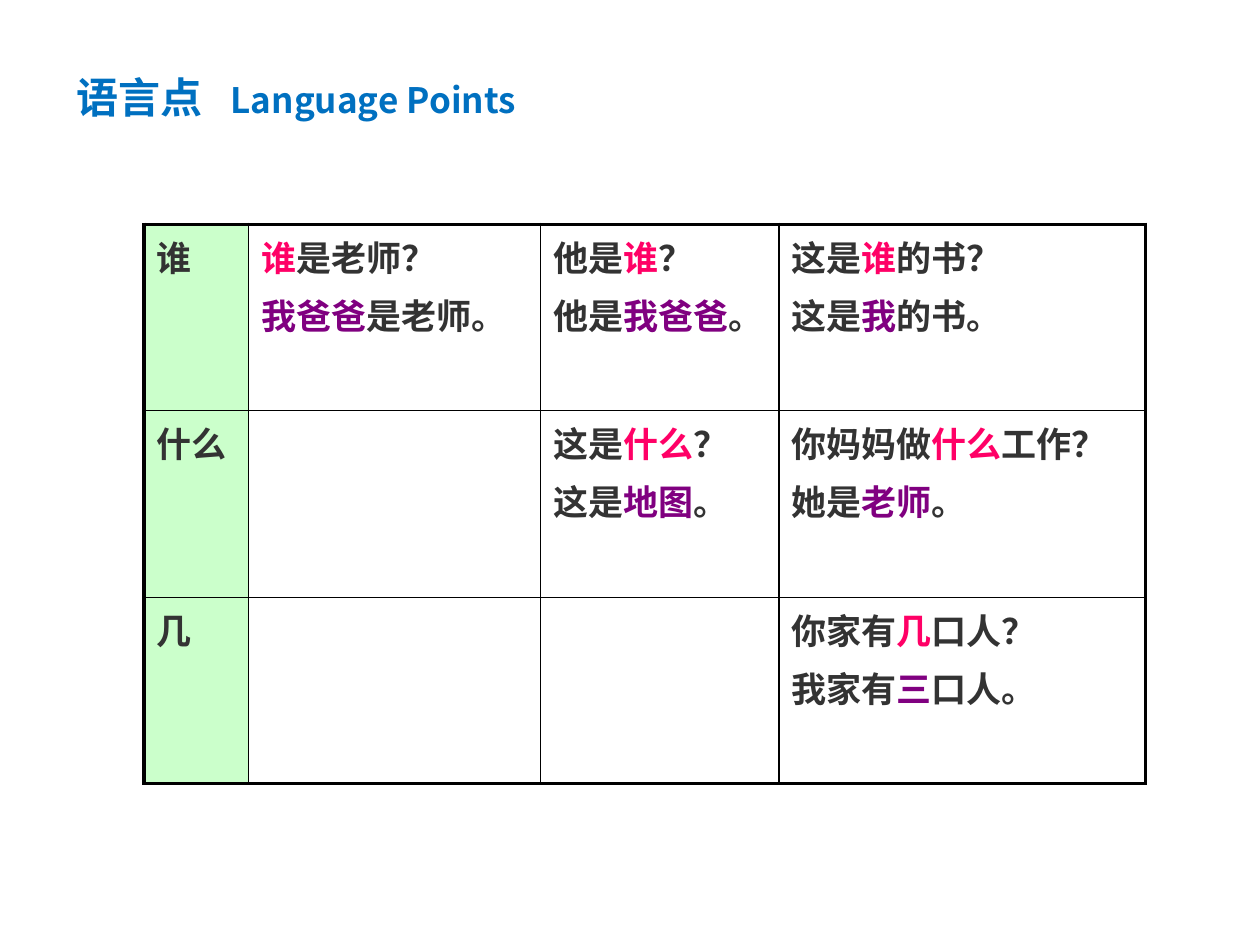
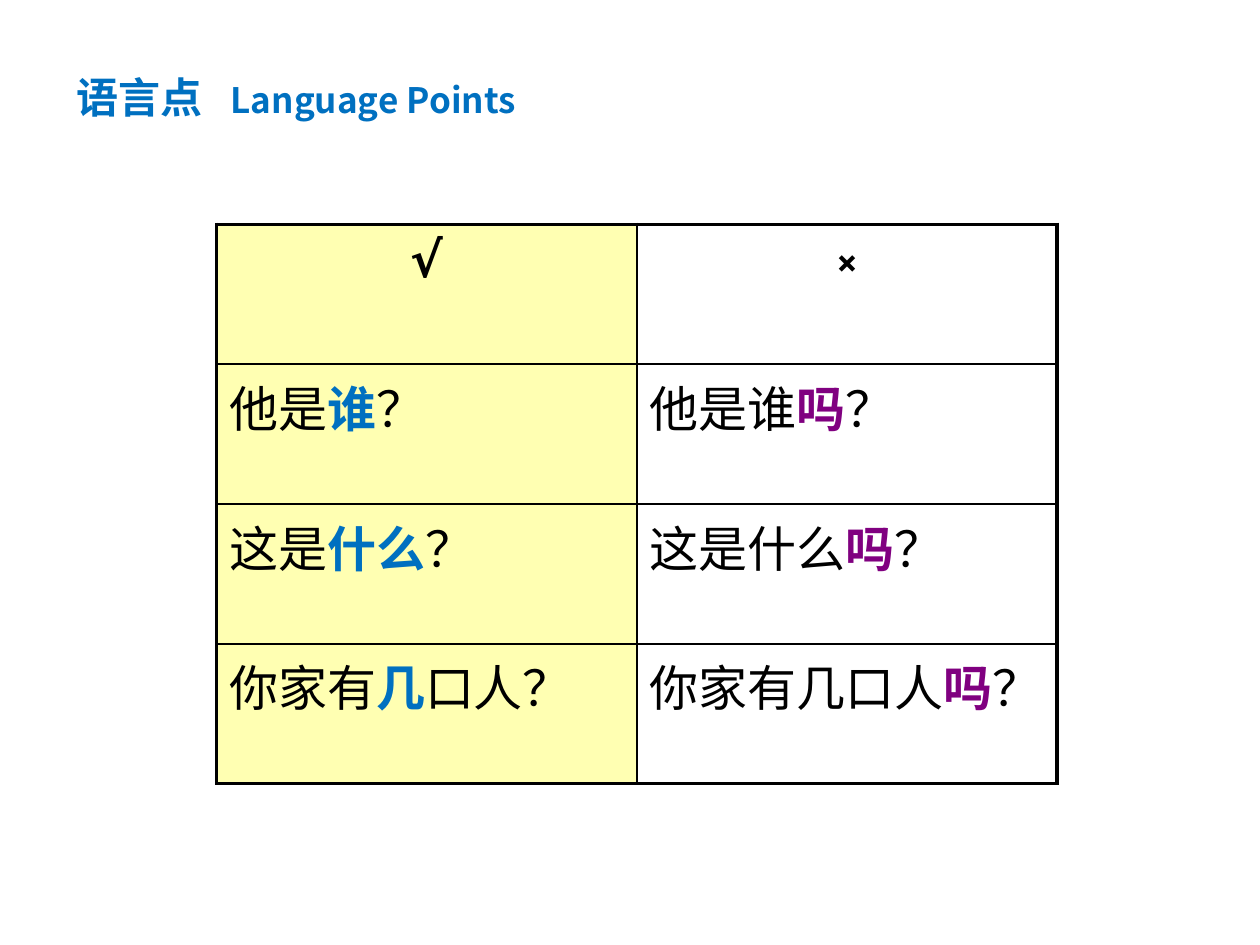
from dataclasses import dataclass

from lxml.etree import SubElement
from pptx import Presentation
from pptx.dml.color import RGBColor as Rgb
from pptx.enum.text import MSO_ANCHOR as Anchor, PP_ALIGN as Align
from pptx.oxml.ns import qn
from pptx.util import Cm, Pt


@dataclass(frozen=True)
class Theme:
    blue: str = "0070C0"
    pink: str = "FF0066"
    purple: str = "800080"
    grey: str = "333333"
    black: str = "000000"
    green: str = "99FF99"
    yellow: str = "FFFF66"
    latin: str = "Cabin"
    chinese: str = "Noto Sans CJK SC"
    title_size: int = 24
    subtitle_size: int = 20
    pattern_size: int = 20
    contrast_size: int = 28
    outer_line: float = 2.25
    inner_line: float = 1


THEME = Theme()
TITLE_BOX = (1.3, 1.32, 17, 1.27)  # left, top, width, height in cm
TABLE_TOP, TABLE_HEIGHT = 4.52, 11.28

# Text between bars is highlighted
PATTERNS = [
    [["谁"], ["|谁|是老师？", "|我爸爸|是老师。"],
     ["他是|谁|？", "他是|我爸爸|。"], ["这是|谁|的书？", "这是|我|的书。"]],
    [["什么"], [], ["这是|什么|？", "这是|地图|。"],
     ["你妈妈做|什么|工作？", "她是|老师|。"]],
    [["几"], [], [], ["你家有|几|口人？", "我家有|三|口人。"]],
]
CONTRASTS = [
    ["√", "×"],
    ["他是|谁|？", "他是谁|吗|？"],
    ["这是|什么|？", "这是什么|吗|？"],
    ["你家有|几|口人？", "你家有几口人|吗|？"],
]


def style_run(run, size, color, bold=True, latin=THEME.latin):
    font = run.font
    font.size, font.bold, font.name = Pt(size), bold, latin
    font.color.rgb = Rgb.from_string(color)
    SubElement(run.font._element, qn("a:ea"), typeface=THEME.chinese)


def write_line(paragraph, line, size, color, accent, bold):
    """Write one sentence, with its marked words bold in the accent colour."""
    paragraph.space_before = Pt(size * 0.2)
    for index, words in enumerate(line.split("|")):
        if words:
            marked = index % 2 == 1
            run = paragraph.add_run()
            run.text = words
            style_run(run, size, accent if marked else color, bold or marked)


def add_title(slide, box):
    frame = slide.shapes.add_textbox(*map(Cm, box)).text_frame
    frame.word_wrap = True
    frame.vertical_anchor = Anchor.MIDDLE
    heading = frame.paragraphs[0]
    for words, size in (("语言点\t", THEME.title_size),
                        ("Language Points", THEME.subtitle_size)):
        run = heading.add_run()
        run.text = words
        style_run(run, size, THEME.blue, latin=THEME.chinese)
    # The tab stop sets the English title apart
    stops = SubElement(heading._p.get_or_add_pPr(), qn("a:tabLst"))
    SubElement(stops, qn("a:tab"), pos=str(Cm(3.1)), algn="l")


def draw_borders(cell, outer_sides):
    properties = cell._tc.get_or_add_tcPr()
    for side in "LRTB":
        width = THEME.outer_line if side in outer_sides else THEME.inner_line
        line = SubElement(properties, qn(f"a:ln{side}"), w=str(Pt(width)))
        fill = SubElement(line, qn("a:solidFill"))
        SubElement(fill, qn("a:srgbClr"), val=THEME.black)


def tint_cell(cell, color):
    cell.fill.solid()
    cell.fill.fore_color.rgb = Rgb.from_string(color)
    shade = cell._tc.tcPr.find(f"{qn('a:solidFill')}/{qn('a:srgbClr')}")
    SubElement(shade, qn("a:alpha"), val="50000")


def add_grid(slide, left, widths, row_count, first_column_tint):
    """Add a ruled table with a heavy frame and a tinted first column."""
    box = (left, TABLE_TOP, sum(widths), TABLE_HEIGHT)
    grid = slide.shapes.add_table(row_count, len(widths), *map(Cm, box)).table
    grid.first_row = grid.horz_banding = False
    for column, width in zip(grid.columns, widths):
        column.width = Cm(width)
    for row in grid.rows:
        row.height = Cm(TABLE_HEIGHT / row_count)
    for r in range(row_count):
        for c in range(len(widths)):
            cell = grid.cell(r, c)
            edges = {"L": c == 0, "R": c == len(widths) - 1,
                     "T": r == 0, "B": r == row_count - 1}
            draw_borders(cell, [side for side, outer in edges.items() if outer])
            if c == 0:
                tint_cell(cell, first_column_tint)
            else:
                cell.fill.background()
    return grid


def add_pattern_table(slide):
    """Question words with sample questions and answers."""
    grid = add_grid(slide, 2.9, (2.11, 5.89, 4.8, 7.39), len(PATTERNS), THEME.green)
    for r, row in enumerate(PATTERNS):
        for c, dialogue in enumerate(row):
            frame = grid.cell(r, c).text_frame
            # Question first, answer below it
            for index, (line, accent) in enumerate(zip(dialogue, (THEME.pink, THEME.purple))):
                paragraph = frame.add_paragraph() if index else frame.paragraphs[0]
                write_line(paragraph, line, THEME.pattern_size, THEME.grey, accent, True)


def add_contrast_table(slide):
    """Right questions beside wrong ones."""
    grid = add_grid(slide, 4.37, (8.47, 8.47), len(CONTRASTS), THEME.yellow)
    for r, row in enumerate(CONTRASTS):
        for c, (line, accent) in enumerate(zip(row, (THEME.blue, THEME.purple))):
            paragraph = grid.cell(r, c).text_frame.paragraphs[0]
            is_header = r == 0
            if is_header:
                paragraph.alignment = Align.CENTER
            write_line(paragraph, line, THEME.contrast_size, THEME.black, accent, is_header)


def main():
    deck = Presentation()
    deck.slide_width, deck.slide_height = Cm(25.4), Cm(19.05)
    for add_table_part in (add_pattern_table, add_contrast_table):
        slide = deck.slides.add_slide(deck.slide_layouts[6])
        add_table_part(slide)
        add_title(slide, TITLE_BOX)
    deck.save("out.pptx")


if __name__ == "__main__":
    main()
